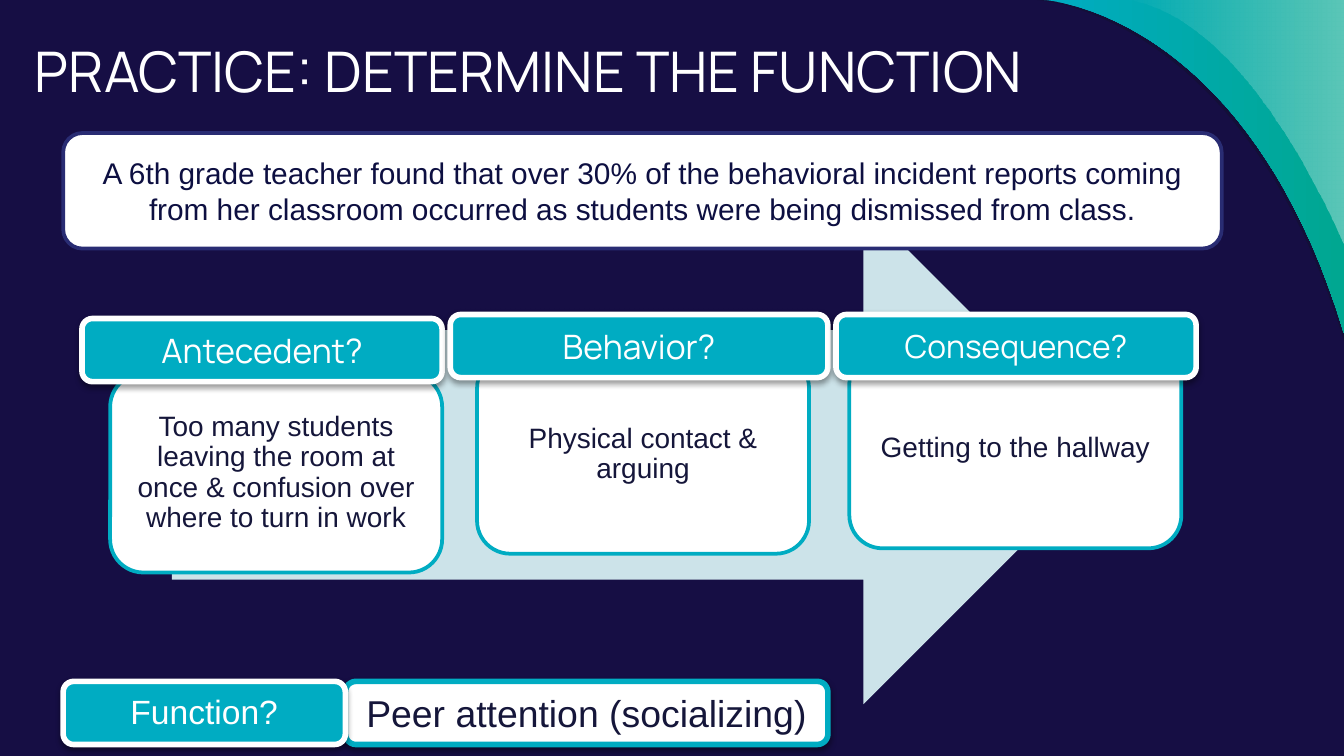
from dataclasses import dataclass

from lxml.etree import SubElement
from pptx import Presentation
from pptx.dml.color import RGBColor
from pptx.enum.shapes import MSO_SHAPE
from pptx.enum.text import MSO_ANCHOR, MSO_AUTO_SIZE, PP_ALIGN
from pptx.oxml.ns import qn
from pptx.shapes.autoshape import Shape
from pptx.slide import Slide
from pptx.text.text import TextFrame
from pptx.util import Inches, Pt

NAVY = RGBColor(0x16, 0x0E, 0x44)
DARK = RGBColor(0x12, 0x10, 0x2F)
INK = RGBColor(0x15, 0x16, 0x3A)
SCENARIO_INK = RGBColor(0x0D, 0x0F, 0x41)
SCENARIO_BORDER = RGBColor(0x29, 0x2C, 0x73)
TEAL = RGBColor(0x00, 0xAC, 0xC2)
GREEN = RGBColor(0x00, 0xA7, 0x91)
PALE_BLUE = RGBColor(0xCC, 0xE3, 0xE9)
WHITE = RGBColor(0xFF, 0xFF, 0xFF)

SLIDE_WIDTH = 10
SLIDE_HEIGHT = SLIDE_WIDTH * 9 / 16
CURVE_STEPS = 40
UNITS_PER_INCH = 1000  # freeform points are rounded to whole units

Point = tuple[float, float]


@dataclass(frozen=True)
class Swoop:
    """A corner region bounded by a Bezier curve from the top edge to the right edge."""
    curve: tuple[Point, Point, Point, Point]
    colors: tuple[RGBColor, ...]
    opacities: tuple[int, ...]


@dataclass(frozen=True)
class Box:
    text: str
    left: float
    top: float
    width: float
    height: float
    size: float
    fill: RGBColor = WHITE
    border: RGBColor = TEAL
    border_width: float = 2
    ink: RGBColor = INK
    font: str = "Arial"
    inset: float | None = None
    line_spacing: float = 1.0
    anchor: MSO_ANCHOR = MSO_ANCHOR.MIDDLE
    shadow: bool = False


def card(text: str, left: float, top: float) -> Box:
    return Box(text, left, top, 2.47, 1.48, 15, inset=0.06, line_spacing=0.9)


def label(text: str, left: float, top: float, width: float, size: float = 18,
          font: str = "Manrope", anchor: MSO_ANCHOR = MSO_ANCHOR.MIDDLE) -> Box:
    return Box(text, left, top, width, 0.47, size, fill=TEAL, border=WHITE, border_width=3,
               ink=WHITE, font=font, anchor=anchor, shadow=True)


SWOOPS = [
    Swoop(((7.71, 0), (7.71, 0), (9.26, 0.08), (10, 2.54)), (DARK,), (54,)),
    Swoop(((7.77, 0), (7.77, 0), (9.28, 0.08), (10, 2.48)), (TEAL, GREEN), (100, 100)),
    Swoop(((8.37, 0), (9.31, 0.11), (10, 1.84), (10, 1.84)), (WHITE, WHITE), (0, 36)),
]

BOXES = [
    card("Too many students leaving the room at once & confusion over where to turn in work",
         0.82, 2.78),
    card("Physical contact & arguing", 3.55, 2.64),
    card("Getting to the hallway", 6.32, 2.6),
    Box("Peer attention (socializing)", 2.57, 5.07, 3.59, 0.47, 20, border_width=3, shadow=True),
    label("Antecedent?", 0.61, 2.37, 2.68),
    label("Function?", 0.47, 5.07, 2.1, font="Arial", anchor=MSO_ANCHOR.TOP),
    label("Behavior?", 3.35, 2.34, 2.81),
    label("Consequence?", 6.22, 2.34, 2.68, size=17),
    Box("A 6th grade teacher found that over 30% of the behavioral incident reports coming "
        "from her classroom occurred as students were being dismissed from class.",
        0.47, 0.99, 8.62, 0.86, 16, border=SCENARIO_BORDER, ink=SCENARIO_INK),
]


def bezier_point(curve: tuple[Point, Point, Point, Point], t: float) -> Point:
    weights = ((1 - t) ** 3, 3 * t * (1 - t) ** 2, 3 * t ** 2 * (1 - t), t ** 3)
    x, y = (sum(w * p[axis] for w, p in zip(weights, curve)) for axis in (0, 1))
    return x, y


def add_swoop(slide: Slide, swoop: Swoop) -> None:
    outline = [bezier_point(swoop.curve, step / CURVE_STEPS) for step in range(CURVE_STEPS + 1)]
    outline.append((SLIDE_WIDTH, 0))
    points = [(x * UNITS_PER_INCH, y * UNITS_PER_INCH) for x, y in outline]
    builder = slide.shapes.build_freeform(*points[0], scale=Inches(1) / UNITS_PER_INCH)
    builder.add_line_segments(points[1:], close=True)
    shape = builder.convert_to_shape()
    shape.shadow.inherit = False
    shape.line.fill.background()
    if len(swoop.colors) == 1:
        shape.fill.solid()
        shape.fill.fore_color.rgb = swoop.colors[0]
    else:
        shape.fill.gradient()
        shape.fill.gradient_angle = 0
        for stop, color in zip(shape.fill.gradient_stops, swoop.colors):
            stop.color.rgb = color
    colors = list(shape._element.spPr.iter(qn("a:srgbClr")))
    for color, opacity in zip(colors, swoop.opacities):
        SubElement(color, qn("a:alpha"), val=str(opacity * 1000))


def add_drop_shadow(shape: Shape) -> None:
    effects = shape._element.spPr.find(qn("a:effectLst"))
    shadow = SubElement(effects, qn("a:outerShdw"), blurRad=str(Pt(3.1)), dist=str(Pt(1.6)),
                        dir="5400000", rotWithShape="0")
    color = SubElement(shadow, qn("a:srgbClr"), val="000000")
    SubElement(color, qn("a:alpha"), val="38000")


def add_arrow(slide: Slide) -> None:
    arrow = slide.shapes.add_shape(MSO_SHAPE.RIGHT_ARROW, Inches(1.28), Inches(1.53),
                                   Inches(7), Inches(3.71))
    arrow.shadow.inherit = False
    arrow.fill.solid()
    arrow.fill.fore_color.rgb = PALE_BLUE
    arrow.line.fill.background()


def set_insets(frame: TextFrame, inset: float) -> None:
    frame.margin_left = frame.margin_right = Inches(inset)
    frame.margin_top = frame.margin_bottom = Inches(inset)


def add_box(slide: Slide, box: Box) -> None:
    shape = slide.shapes.add_shape(MSO_SHAPE.ROUNDED_RECTANGLE, Inches(box.left), Inches(box.top),
                                   Inches(box.width), Inches(box.height))
    shape.shadow.inherit = False
    if box.shadow:
        add_drop_shadow(shape)
    shape.fill.solid()
    shape.fill.fore_color.rgb = box.fill
    shape.line.color.rgb = box.border
    shape.line.width = Pt(box.border_width)

    frame = shape.text_frame
    frame.word_wrap = True
    frame.vertical_anchor = box.anchor
    if box.inset is not None:
        set_insets(frame, box.inset)
    paragraph = frame.paragraphs[0]
    paragraph.text = box.text
    paragraph.alignment = PP_ALIGN.CENTER
    paragraph.line_spacing = box.line_spacing
    paragraph.font.name = box.font
    paragraph.font.size = Pt(box.size)
    paragraph.font.color.rgb = box.ink


def format_title(slide: Slide) -> None:
    title = slide.shapes.title
    title.left, title.top = Inches(0.16), Inches(0.17)
    title.width, title.height = Inches(7.69), Inches(0.69)
    frame = title.text_frame
    frame.auto_size = MSO_AUTO_SIZE.NONE
    frame.word_wrap = True
    frame.vertical_anchor = MSO_ANCHOR.TOP
    set_insets(frame, 0.1)
    paragraph = frame.paragraphs[0]
    paragraph.text = "PRACTICE: DETERMINE THE FUNCTION"
    paragraph.alignment = PP_ALIGN.LEFT
    paragraph.font.name = "Manrope"
    paragraph.font.size = Pt(30)
    paragraph.font.color.rgb = WHITE


def main() -> None:
    presentation = Presentation()
    presentation.slide_width = Inches(SLIDE_WIDTH)
    presentation.slide_height = Inches(SLIDE_HEIGHT)
    slide = presentation.slides.add_slide(presentation.slide_layouts.get_by_name("Title Only"))
    slide.background.fill.solid()
    slide.background.fill.fore_color.rgb = NAVY

    format_title(slide)
    for swoop in SWOOPS:
        add_swoop(slide, swoop)
    add_arrow(slide)
    for box in BOXES:
        add_box(slide, box)
    presentation.save("out.pptx")


if __name__ == "__main__":
    main()
